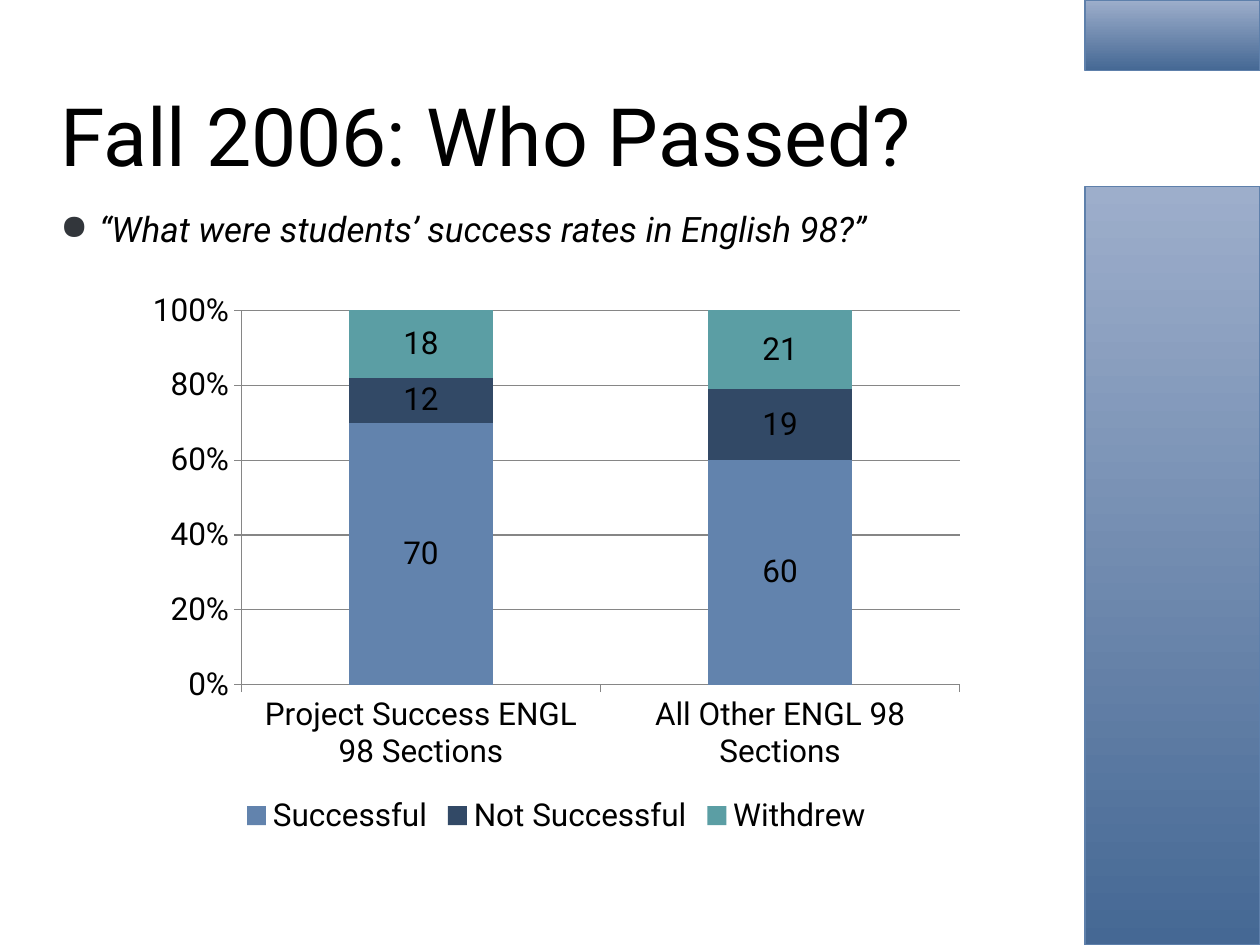
from lxml import etree
from pptx import Presentation
from pptx import util as u
from pptx.chart.data import CategoryChartData
from pptx.dml.color import RGBColor
from pptx.enum import chart as ch, shapes, text
from pptx.oxml.ns import qn

COLORS = {
    "ink": "000000",
    "bullet": "32363B",
    "panel_dark": "456894",
    "panel_light": "9DAECB",
    "panel_edge": "5E80AB",
    "grid": "868686",
    "Successful": "6283AD",
    "Not Successful": "324966",
    "Withdrew": "5B9EA4",
}


def rgb(name):
    return RGBColor.from_string(COLORS[name])


def apply(target, **values):
    for name, value in values.items():
        setattr(target, name, value)


class Deck:
    """Holds the font and the current slide."""

    font = "Roboto"

    def __init__(self, width, height):
        self.file = Presentation()
        apply(self.file, slide_width=u.Inches(width), slide_height=u.Inches(height))
        self.slide = self.file.slides.add_slide(self.file.slide_layouts[6])

    def style(self, font, size, **values):
        apply(font, name=self.font, size=u.Pt(size), **values)
        font.color.rgb = rgb("ink")

    def text(self, box, words, size, frame_format, **font_format):
        frame = self.slide.shapes.add_textbox(*map(u.Inches, box)).text_frame
        apply(frame, word_wrap=True, **frame_format)
        paragraph = frame.paragraphs[0]
        run = paragraph.add_run()
        run.text = words
        self.style(run.font, size, **font_format)
        return paragraph

    def bullet(self, paragraph, indent):
        props = paragraph._p.get_or_add_pPr()
        props.set("marL", str(u.Inches(indent)))
        props.set("indent", str(-u.Inches(indent)))
        color = etree.SubElement(props, qn("a:buClr"))
        etree.SubElement(color, qn("a:srgbClr"), val=COLORS["bullet"])
        etree.SubElement(props, qn("a:buChar"), char="●")

    def panel(self, box):
        panel = self.slide.shapes.add_shape(
            shapes.MSO_SHAPE.RECTANGLE, *map(u.Inches, box))
        panel.shadow.inherit = False
        panel.fill.gradient()
        panel.fill.gradient_angle = 90
        for stop, name in zip(panel.fill.gradient_stops, ("panel_dark", "panel_light")):
            stop.color.rgb = rgb(name)
        panel.line.color.rgb = rgb("panel_edge")
        panel.line.width = u.Pt(1)

    def stacked_chart(self, box, categories, results):
        data = CategoryChartData(number_format="#,##0")
        data.categories = categories
        for outcome, rates in results.items():
            data.add_series(outcome, rates)
        chart = self.slide.shapes.add_chart(
            ch.XL_CHART_TYPE.COLUMN_STACKED_100, *map(u.Inches, box), data).chart
        self.style(chart.font, 18)
        apply(chart, has_title=False, has_legend=True)
        apply(chart.legend, position=ch.XL_LEGEND_POSITION.BOTTOM, include_in_layout=False)

        plot = chart.plots[0]
        apply(plot, gap_width=150, overlap=100, vary_by_categories=False)
        for series in plot.series:
            series.format.fill.solid()
            series.format.fill.fore_color.rgb = rgb(series.name)
            labels = series.data_labels
            apply(labels, show_value=True, number_format="#,##0",
                  number_format_is_linked=False)
            self.style(labels.font, 18)

        rate_axis = chart.value_axis
        apply(rate_axis, major_unit=0.2, minimum_scale=0, maximum_scale=1,
              has_major_gridlines=True)
        apply(rate_axis.tick_labels, number_format="0%", number_format_is_linked=False)
        for axis in (chart.category_axis, rate_axis):
            axis.major_tick_mark = ch.XL_TICK_MARK.OUTSIDE
            axis.format.line.color.rgb = rgb("grid")
        rate_axis.major_gridlines.format.line.color.rgb = rgb("grid")


def main():
    deck = Deck(10, 7.5)
    left, width = 0.38, 7.75
    deck.text((left, 0.53, width, 1.07), "Fall 2006: Who Passed?", 46,
              {"vertical_anchor": text.MSO_ANCHOR.MIDDLE})
    question = deck.text((left, 1.3, width, 5.4),
                         "“What were students’ success rates in English 98?”", 20,
                         {"margin_top": u.Inches(0.35)}, italic=True)
    deck.bullet(question, 0.31)

    for top, height in ((1.48, 6.02), (0, 0.56)):
        deck.panel((8.61, top, 1.39, height))

    deck.stacked_chart(
        (1.08, 2.23, 6.67, 4.44),
        ["Project Success ENGL 98 Sections", "All Other ENGL 98 Sections"],
        {"Successful": (70, 60), "Not Successful": (12, 19), "Withdrew": (18, 21)})
    deck.file.save("out.pptx")


if __name__ == "__main__":
    main()
